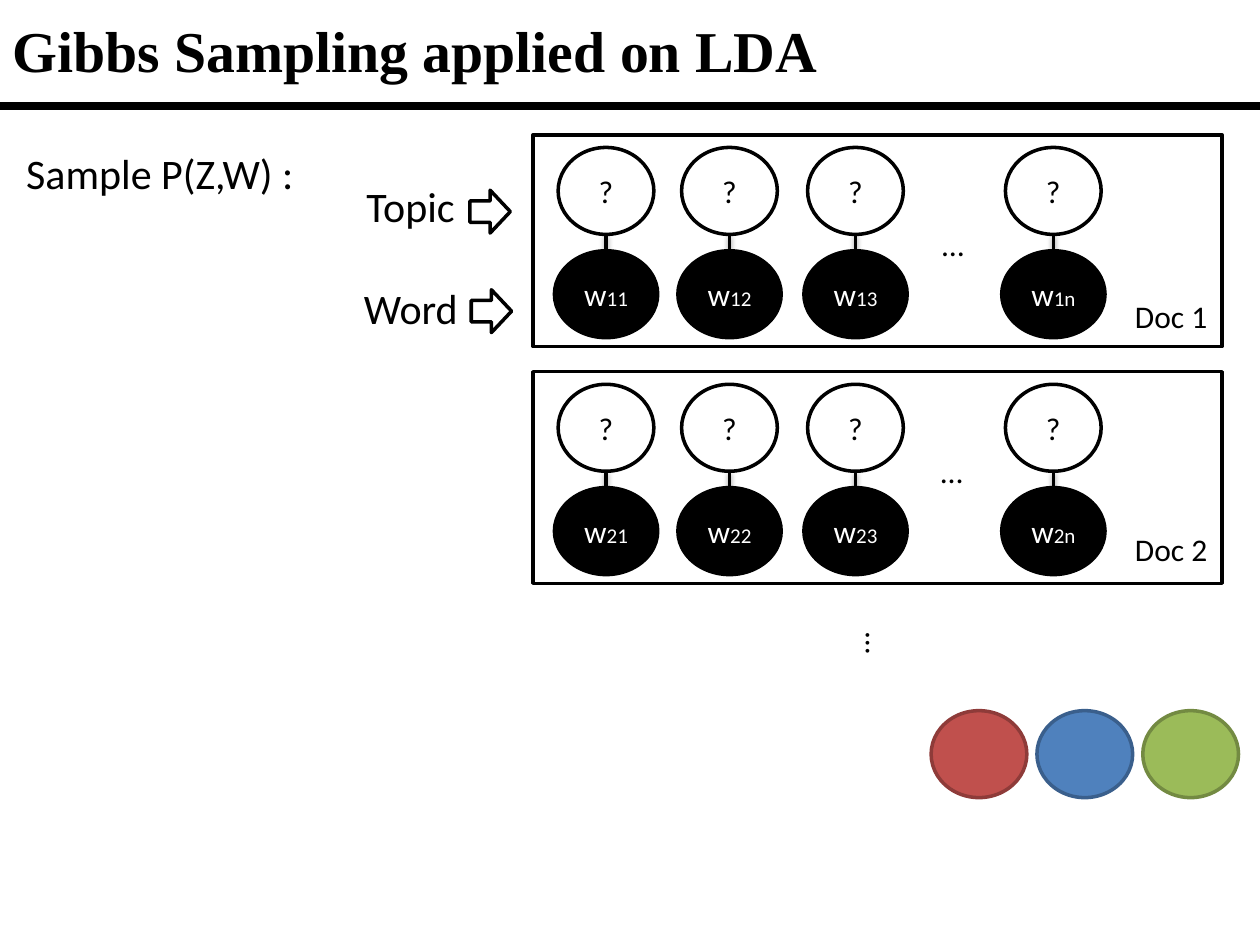
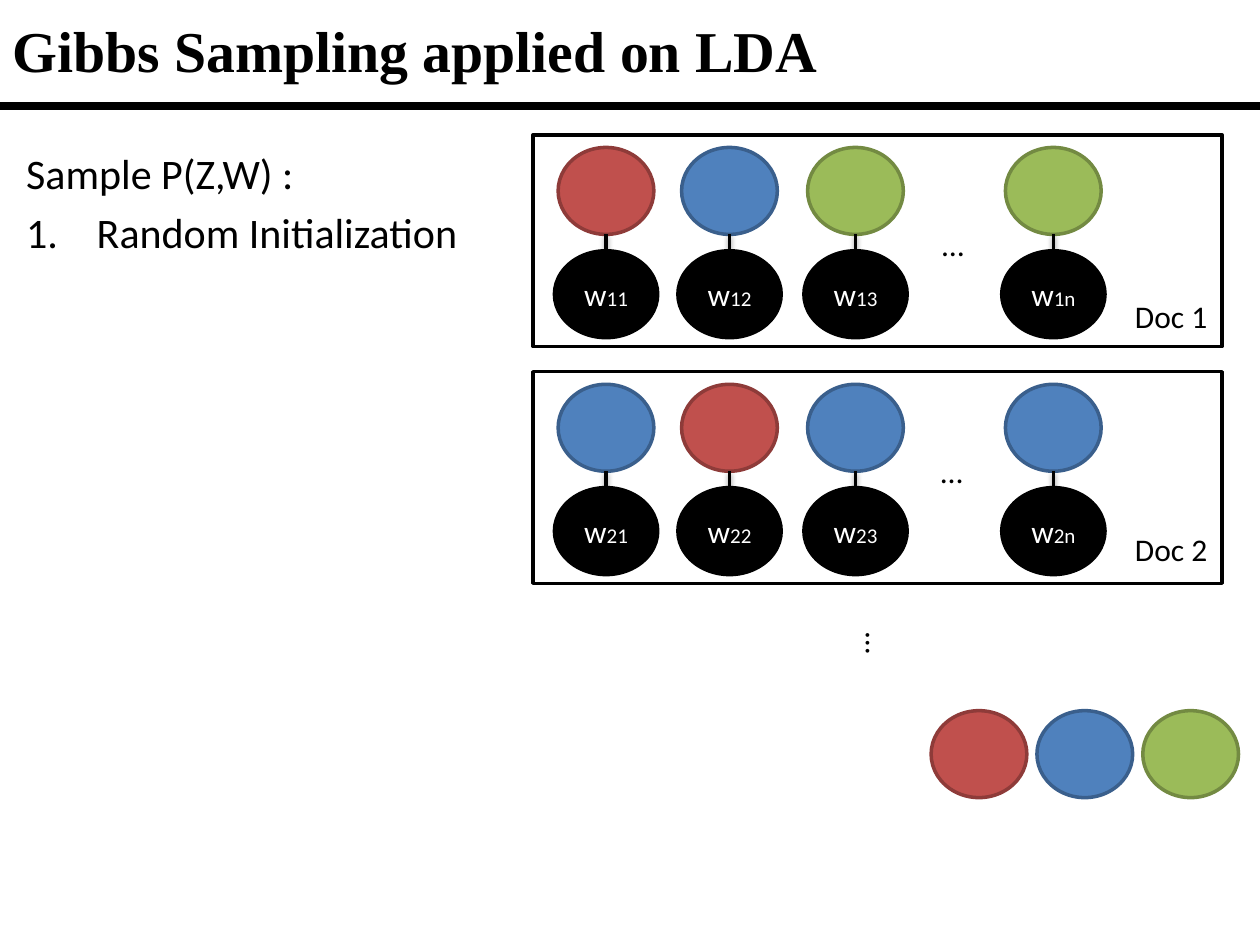
from dataclasses import dataclass

from lxml.etree import SubElement
from pptx import Presentation
from pptx.dml.color import RGBColor
from pptx.enum.shapes import MSO_CONNECTOR as Connector
from pptx.enum.shapes import MSO_SHAPE as Shape
from pptx.enum.text import MSO_ANCHOR as Anchor
from pptx.enum.text import PP_ALIGN as Align
from pptx.oxml.ns import qn
from pptx.util import Inches, Pt


@dataclass(frozen=True)
class Theme:
    black: str = "000000"
    white: str = "FFFFFF"
    red: tuple = ("C0504D", "8E3B39")
    blue: tuple = ("4F81BD", "3A5F8C")
    green: tuple = ("9BBB59", "738A42")
    unknown: tuple = ("FFFFFF", "000000")
    title_font: str = "Times New Roman"
    body_font: str = "Calibri"
    title_size: float = 33
    body_size: float = 24
    label_size: float = 18
    index_size: float = 12
    outline: float = 2
    rule: float = 4.5


THEME = Theme()
COLUMN_CENTERS = (4.81, 5.79, 6.79, 8.36)
TOPIC_SIZE = (0.76, 0.69)
WORD_SIZE = (0.82, 0.69)


def rgb(value):
    return RGBColor.from_string(value)


def write(para, text, size=THEME.label_size, color=THEME.black,
          font=THEME.body_font, bold=False):
    span = para.add_run()
    span.text = text
    span.font.size = Pt(size)
    span.font.name = font
    span.font.bold = bold
    span.font.color.rgb = rgb(color)


def number_paragraph(para, indent):
    properties = para._p.get_or_add_pPr()
    properties.set("marL", str(Inches(indent)))
    properties.set("indent", str(-Inches(indent)))
    SubElement(properties, qn("a:buFont"), typeface="+mj-lt")
    SubElement(properties, qn("a:buAutoNum"), type="arabicPeriod")


class SlideBuilder:
    def __init__(self, deck, theme):
        self.deck = deck
        self.theme = theme
        self.page = None

    def new_page(self, title):
        self.page = self.deck.slides.add_slide(self.deck.slide_layouts[6])
        self.text(title, 0, 0, 10, 0.79, anchor=Anchor.MIDDLE, bold=True,
                  size=self.theme.title_size, font=self.theme.title_font)
        self.line((0, 0.84), (10, 0.84), self.theme.rule)

    def text(self, text, left, top, width, height, anchor=Anchor.TOP,
             rotation=0, **style):
        box = self.page.shapes.add_textbox(
            Inches(left), Inches(top), Inches(width), Inches(height))
        box.rotation = rotation
        frame = box.text_frame
        frame.word_wrap = True
        frame.vertical_anchor = anchor
        write(frame.paragraphs[0], text, **style)
        return box

    def shape(self, kind, left, top, width, height, colors):
        fill, line = colors
        shape = self.page.shapes.add_shape(
            kind, Inches(left), Inches(top), Inches(width), Inches(height))
        shape.shadow.inherit = False
        shape.fill.solid()
        shape.fill.fore_color.rgb = rgb(fill)
        shape.line.color.rgb = rgb(line)
        shape.line.width = Pt(self.theme.outline)
        return shape

    def ellipse(self, center, top, size, colors, *spans):
        width, height = size
        ellipse = self.shape(Shape.OVAL, center - width / 2, top, width, height, colors)
        frame = ellipse.text_frame
        frame.margin_left = frame.margin_right = 0
        frame.vertical_anchor = Anchor.MIDDLE
        para = frame.paragraphs[0]
        para.alignment = Align.CENTER
        for text, size, color in spans:
            write(para, text, size=size, color=color)
        return ellipse

    def line(self, start, end, width, shadow=False):
        line = self.page.shapes.add_connector(
            Connector.STRAIGHT, *(Inches(value) for value in (*start, *end)))
        line.line.color.rgb = rgb(self.theme.black)
        line.line.width = Pt(width)
        effects = SubElement(line._element.spPr, qn("a:effectLst"))
        if shadow:
            outer = SubElement(effects, qn("a:outerShdw"), blurRad=str(Pt(3.1)),
                               dist=str(Pt(1.6)), dir="5400000", rotWithShape="0")
            color = SubElement(outer, qn("a:srgbClr"), val=self.theme.black)
            SubElement(color, qn("a:alpha"), val="38000")
        return line

    def document(self, number, top, topics, dots, label_top):
        theme = self.theme
        self.shape(Shape.RECTANGLE, 4.23, top, 5.47, 1.68, theme.unknown)
        topic_top, word_top = top + 0.1, top + 0.92
        for center, index, colors in zip(COLUMN_CENTERS, "123n", topics):
            word = self.ellipse(center, word_top, WORD_SIZE, (theme.black, theme.black),
                                ("w", theme.label_size, theme.white),
                                (f"{number}{index}", theme.index_size, theme.white))
            mark = [("?", theme.label_size, theme.black)] if colors == theme.unknown else []
            self.ellipse(center, topic_top, TOPIC_SIZE, colors, *mark)
            link = self.line((center, topic_top + TOPIC_SIZE[1]), (center, word_top),
                             theme.outline, shadow=True)
            link.end_connect(word, 0)
        self.text("…", *dots, 0.56, 0.4)
        self.text(f"Doc {number}", 8.91, label_top, 0.93, 0.4)

    def model(self, first_topics, second_topics):
        theme = self.theme
        self.text("…", 6.69, 5, 0.56, 0.4, rotation=90)
        self.document(1, 1.07, first_topics, (7.38, 1.74), 2.31)
        self.document(2, 2.95, second_topics, (7.37, 3.54), 4.16)
        for step, colors in enumerate((theme.red, theme.blue, theme.green)):
            self.ellipse(7.77 + 0.84 * step, 5.64, TOPIC_SIZE, colors)

    def row_label(self, text, left, top, arrow_left, arrow_top):
        self.shape(Shape.RIGHT_ARROW, arrow_left, arrow_top, 0.32, 0.34,
                   self.theme.unknown)
        self.text(text, left, top, 1.21, 0.5, size=self.theme.body_size)

    def steps(self, *items):
        size = self.theme.body_size
        box = self.text("Sample P(Z,W) :", 0.11, 1.12, 3.83, 0.79, size=size)
        for item in items:
            para = box.text_frame.add_paragraph()
            para.space_before = Pt(5)
            number_paragraph(para, 0.56)
            write(para, item, size=size)


def main():
    deck = Presentation()
    deck.slide_width, deck.slide_height = Inches(10), Inches(7.5)
    builder = SlideBuilder(deck, THEME)
    title = "Gibbs Sampling applied on LDA"
    red, blue, green = THEME.red, THEME.blue, THEME.green

    builder.new_page(title)
    unknown_topics = (THEME.unknown,) * len(COLUMN_CENTERS)
    builder.model(unknown_topics, unknown_topics)
    builder.steps()
    builder.row_label("Topic", 2.81, 1.38, 3.73, 1.51)
    builder.row_label("Word", 2.79, 2.19, 3.74, 2.3)

    builder.new_page(title)
    builder.model((red, blue, green, green), (blue, red, blue, blue))
    builder.steps("Random Initialization")

    deck.save("out.pptx")


if __name__ == "__main__":
    main()
